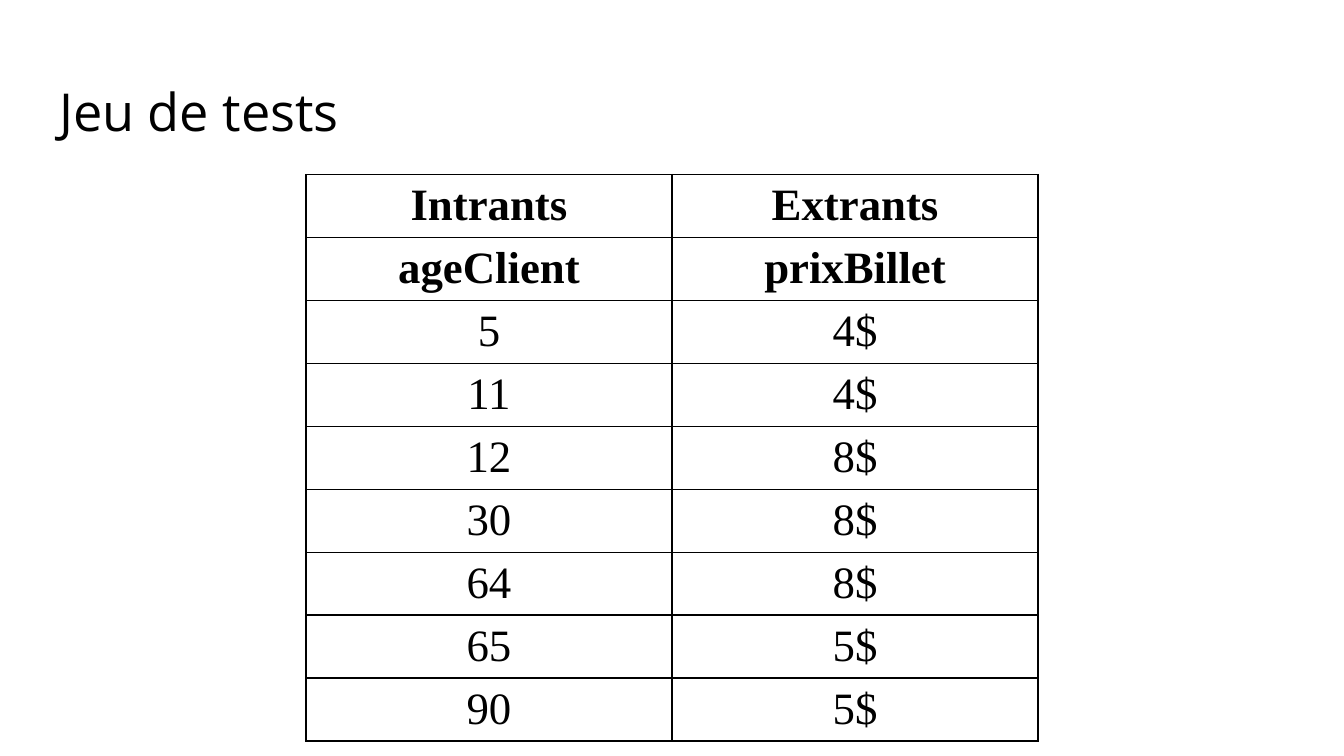
"""Build the slide "Jeu de tests": a table of test inputs and expected outputs."""
from lxml import etree
from pptx import Presentation
from pptx import util as u
from pptx.dml.color import RGBColor
from pptx.enum import text
from pptx.oxml import ns

TITLE = "Jeu de tests"
HEADINGS = [("Intrants", "Extrants"), ("ageClient", "prixBillet")]
TESTS = [
    ("5", "4$"),
    ("11", "4$"),
    ("12", "8$"),
    ("30", "8$"),
    ("64", "8$"),
    ("65", "5$"),
    ("90", "5$"),
]
COLORS = {"ink": "000000", "paper": "FFFFFF"}
COLUMN_WIDTH, ROW_HEIGHT = u.Cm(6.92), u.Cm(1.19)
BORDER_WIDTH = u.Pt(0.96)


def add_run(paragraph, words, font, size, bold=False):
    """Append one styled run to a paragraph."""
    run = paragraph.add_run()
    run.text = words
    run.font.name, run.font.size, run.font.bold = font, u.Pt(size), bold
    run.font.color.rgb = RGBColor.from_string(COLORS["ink"])


def add_borders(cell):
    """Draw a solid line on the four sides of a cell."""
    properties = cell._tc.get_or_add_tcPr()
    for position, side in enumerate(("lnL", "lnR", "lnT", "lnB")):
        line = etree.Element(ns.qn(f"a:{side}"), w=str(int(BORDER_WIDTH)))
        fill = etree.SubElement(line, ns.qn("a:solidFill"))
        etree.SubElement(fill, ns.qn("a:srgbClr"), val=COLORS["ink"])
        properties.insert(position, line)


def add_title(slide):
    """Place the slide title."""
    title = slide.shapes.add_textbox(u.Cm(0.87), u.Cm(1.24), u.Cm(23.67), u.Cm(1.6))
    frame = title.text_frame
    frame.word_wrap = True
    frame.margin_left = frame.margin_right = u.Cm(0.25)
    frame.margin_top = frame.margin_bottom = u.Cm(0.25)
    add_run(frame.paragraphs[0], TITLE, "Open Sans", 28)


def add_tests(slide):
    """Place the table of tests."""
    rows = HEADINGS + TESTS
    columns = len(HEADINGS[0])
    tests = slide.shapes.add_table(
        len(rows), columns, u.Cm(5.78), u.Cm(3.3),
        COLUMN_WIDTH * columns, ROW_HEIGHT * len(rows),
    ).table
    tests.first_row = tests.horz_banding = False
    for row, values in enumerate(rows):
        for column, value in enumerate(values):
            cell = tests.cell(row, column)
            cell.fill.background()
            cell.margin_left = cell.margin_right = u.Cm(0.19)
            cell.margin_top, cell.margin_bottom = u.Cm(0.12), u.Cm(0.04)
            add_borders(cell)
            paragraph = cell.text_frame.paragraphs[0]
            paragraph.alignment = text.PP_ALIGN.CENTER
            add_run(paragraph, value, "Times New Roman", 24, row < len(HEADINGS))


def main():
    """Assemble and save the slide."""
    deck = Presentation()
    deck.slide_width, deck.slide_height = u.Cm(25.4), u.Cm(14.29)
    slide = deck.slides.add_slide(deck.slide_layouts[6])
    slide.background.fill.solid()
    slide.background.fill.fore_color.rgb = RGBColor.from_string(COLORS["paper"])
    add_title(slide)
    add_tests(slide)
    deck.save("out.pptx")


if __name__ == "__main__":
    main()
